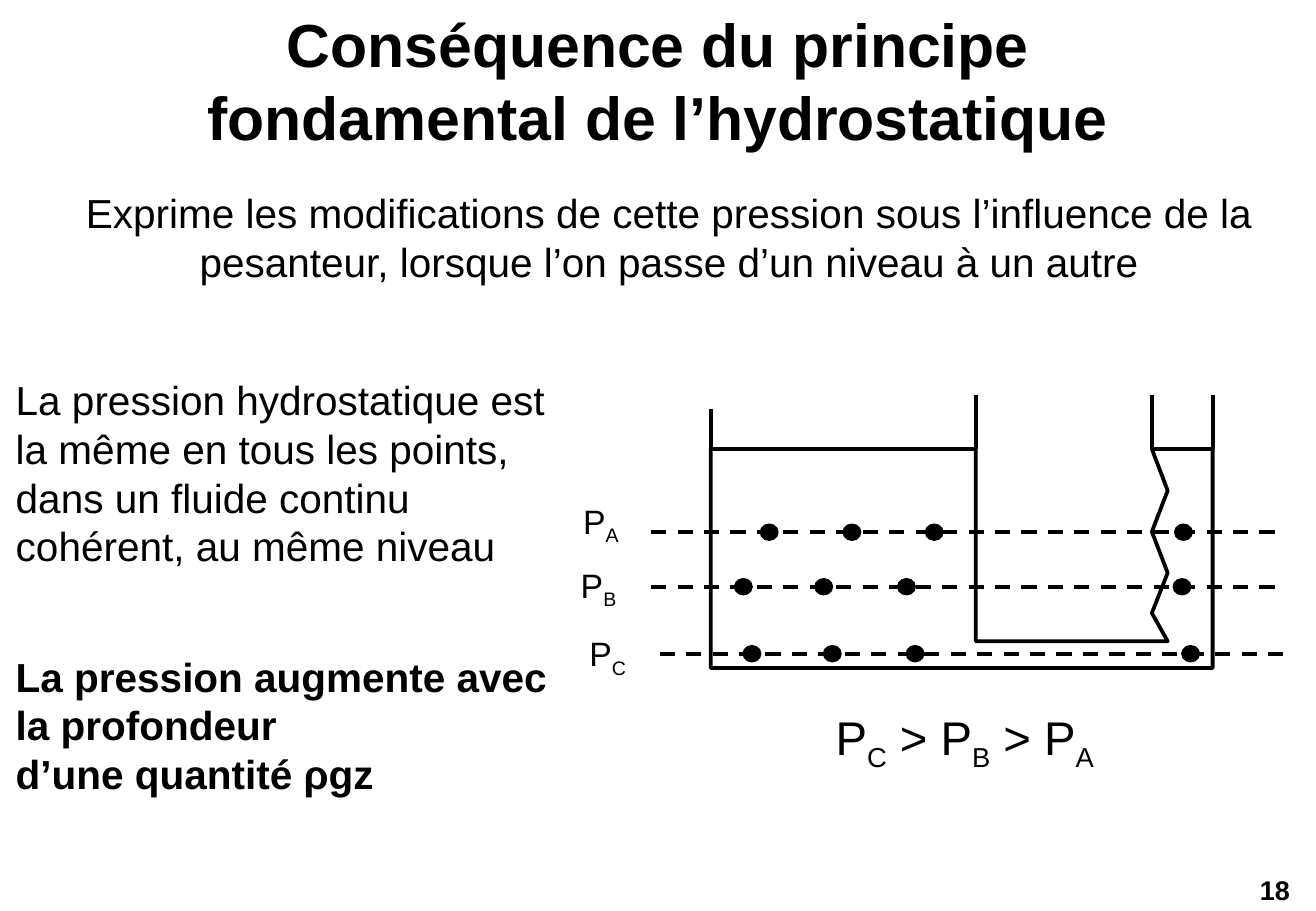
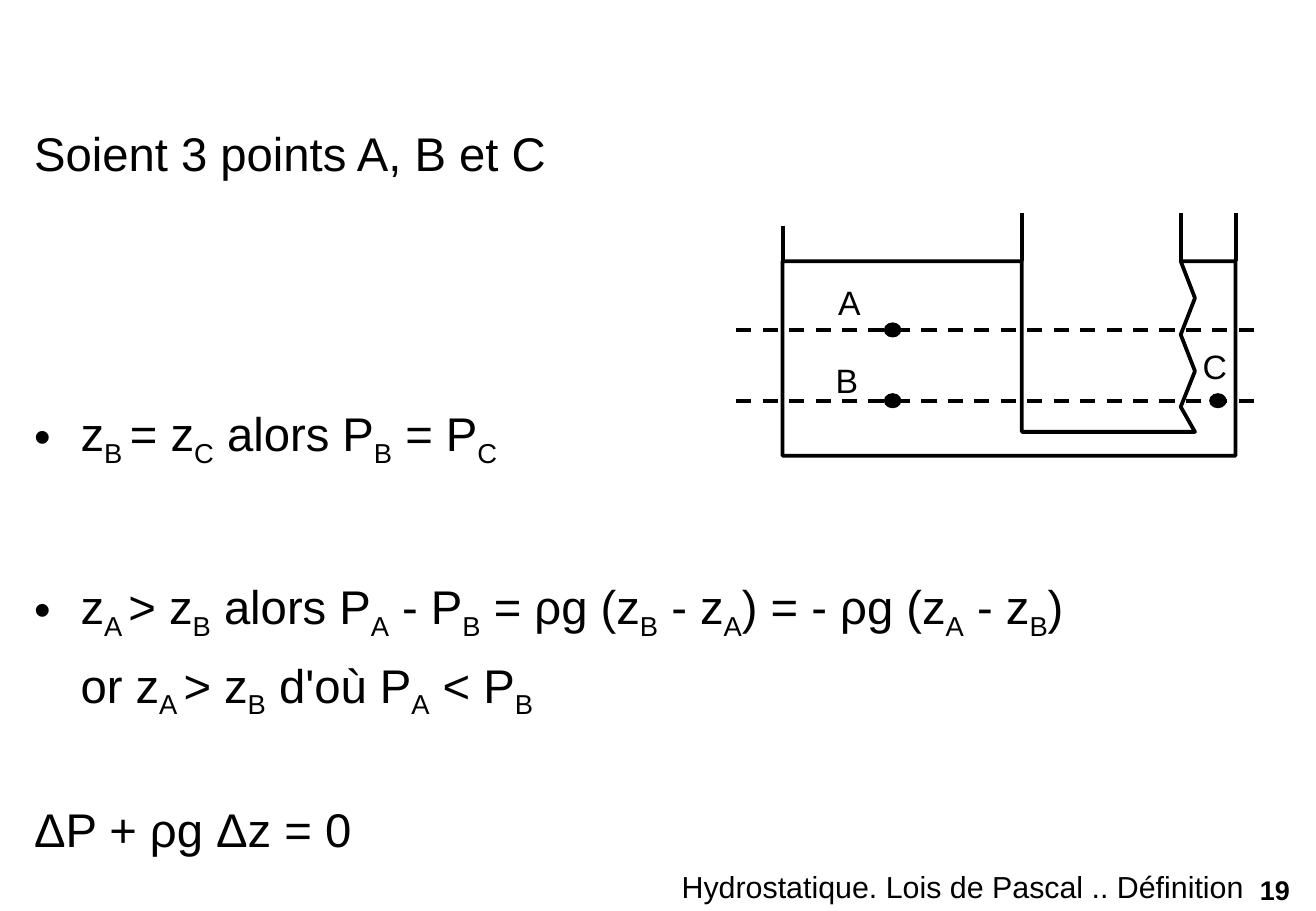
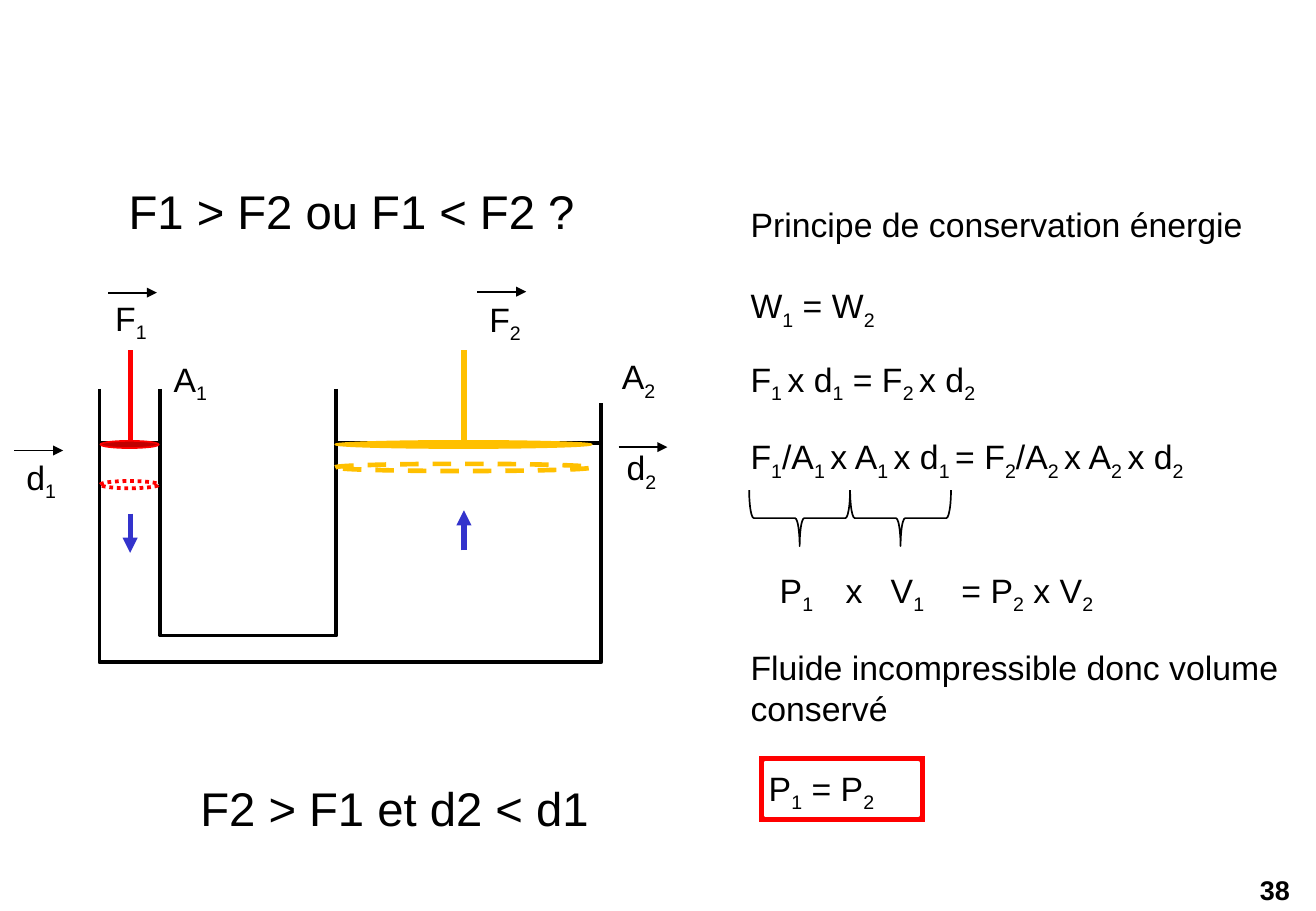
import pptx
import pptx.util
import pptx.dml.color
import pptx.enum.dml
import pptx.enum.shapes
import pptx.enum.text
import pptx.oxml.ns
import lxml.etree

Cm = pptx.util.Cm
Pt = pptx.util.Pt
RGB = pptx.dml.color.RGBColor
SHAPE = pptx.enum.shapes.MSO_SHAPE
DASH = pptx.enum.dml.MSO_LINE
ANCHOR = pptx.enum.text.MSO_ANCHOR
ALIGN = pptx.enum.text.PP_ALIGN
qn = pptx.oxml.ns.qn

BLACK = RGB(0x00, 0x00, 0x00)
WHITE = RGB(0xFF, 0xFF, 0xFF)
RED = RGB(0xFF, 0x00, 0x00)
DARK_RED = RGB(0xC0, 0x00, 0x00)
GOLD = RGB(0xFF, 0xC0, 0x00)
BLUE = RGB(0x33, 0x33, 0xCC)


class Lesson:
    font = "Arial"
    wall = 2.25
    content_layout = 1
    blank_layout = 6

    def __init__(self):
        self.deck = pptx.Presentation()
        self.deck.slide_width = Cm(27.51)
        self.deck.slide_height = Cm(19.05)
        self.page = None

    def new_page(self, number, layout):
        self.page = self.deck.slides.add_slide(self.deck.slide_layouts[layout])
        self.text(str(number), 26.09, 18.14, 1.3, 0.94, 16, bold=True)

    def set_para(self, para, text, size, bold=False):
        if "[" in text:
            for position, part in enumerate(text.replace("]", "[").split("[")):
                if part:
                    span = para.add_run()
                    span.text = part
                    if position % 2:
                        span._r.get_or_add_rPr().set("baseline", "-25000")
        else:
            para.text = text
        for span in para.runs:
            span.font.name = self.font
            span.font.size = Pt(size)
            span.font.bold = bold
            span.font.color.rgb = BLACK

    def text(self, text, left, top, width, height, size=20, bold=False,
             anchor=ANCHOR.TOP, tabs=()):
        box = self.page.shapes.add_textbox(Cm(left), Cm(top), Cm(width), Cm(height))
        box.text_frame.word_wrap = True
        box.text_frame.vertical_anchor = anchor
        para = box.text_frame.paragraphs[0]
        if tabs:
            stops = lxml.etree.SubElement(para._p.get_or_add_pPr(), qn("a:tabLst"))
            for stop in tabs:
                lxml.etree.SubElement(stops, qn("a:tab"), pos=str(Cm(stop)), algn="l")
        self.set_para(para, text, size, bold)
        return box

    def place(self, holder, left, top, width, height, anchor):
        holder.left, holder.top = Cm(left), Cm(top)
        holder.width, holder.height = Cm(width), Cm(height)
        frame = holder.text_frame
        frame.word_wrap = True
        frame.auto_size = pptx.enum.text.MSO_AUTO_SIZE.NONE
        frame.vertical_anchor = anchor
        return frame

    def title(self, text):
        holder = self.page.shapes.title
        if not text:
            holder.element.getparent().remove(holder.element)
            return
        frame = self.place(holder, 2.06, 0.08, 23.39, 3.18, ANCHOR.MIDDLE)
        para = frame.paragraphs[0]
        para.alignment = ALIGN.CENTER
        self.set_para(para, text, 36, bold=True)

    def body(self, items, left, top, width, height, size, align=ALIGN.LEFT):
        holder = self.page.placeholders[1]
        frame = self.place(holder, left, top, width, height, ANCHOR.TOP)
        for index, (text, before, bullet, indent) in enumerate(items):
            para = frame.add_paragraph() if index else frame.paragraphs[0]
            props = para._p.get_or_add_pPr()
            props.set("marL", str(Cm(indent)))
            props.set("indent", str(-Cm(indent) if bullet else 0))
            if bullet:
                lxml.etree.SubElement(props, qn("a:buChar"), char="•")
            else:
                lxml.etree.SubElement(props, qn("a:buNone"))
            para.space_before = Pt(before)
            para.alignment = align
            self.set_para(para, text, size)

    def line(self, start, end, color=BLACK, width=wall, dash=None, arrow=False):
        points = [Cm(value) for value in (*start, *end)]
        link = self.page.shapes.add_connector(
            pptx.enum.shapes.MSO_CONNECTOR.STRAIGHT, *points)
        link.line.color.rgb = color
        link.line.width = Pt(width)
        if dash:
            link.line.dash_style = dash
        props = link.element.spPr
        if arrow:
            lxml.etree.SubElement(props.find(qn("a:ln")), qn("a:tailEnd"), type="triangle")
        lxml.etree.SubElement(props, qn("a:effectLst"))

    def outline(self, shape, fill, color, width, dash=None):
        shape.shadow.inherit = False
        if fill is None:
            shape.fill.background()
        else:
            shape.fill.solid()
            shape.fill.fore_color.rgb = fill
        shape.line.color.rgb = color
        shape.line.width = Pt(width)
        if dash:
            shape.line.dash_style = dash

    def shape(self, kind, left, top, width, height, fill, color, weight=1, dash=None):
        shape = self.page.shapes.add_shape(kind, Cm(left), Cm(top), Cm(width), Cm(height))
        self.outline(shape, fill, color, weight, dash)
        return shape

    def level(self, left, right, y, dots, dot_width, dot_height):
        self.line((left, y), (right, y), dash=DASH.DASH)
        for x in dots:
            self.shape(SHAPE.OVAL, x - dot_width / 2, y - dot_height / 2,
                       dot_width, dot_height, BLACK, BLACK)

    def vessel(self, left, top, width, height, wavy=True):
        def point(x, y):
            return left + x * width / 10.49, top + y * height / 5.72

        wave = [(9.55, 2.01), (9.22, 2.87), (9.55, 3.73), (9.22, 4.57), (9.55, 5.16)]
        tube = wave if wavy else [(9.22, 5.16)]
        corners = [(0, 1.14), (0, 5.72), (10.49, 5.72), (10.49, 1.14), (9.22, 1.14),
                   *tube, (5.54, 5.16), (5.54, 1.14)]
        points = [tuple(Cm(value) for value in point(*corner)) for corner in corners]
        builder = self.page.shapes.build_freeform(*points[0])
        builder.add_line_segments(points[1:], close=True)
        self.outline(builder.convert_to_shape(), None, BLACK, self.wall)
        for x, y in ((0, 0.3), (5.54, 0), (9.22, 0), (10.49, 0)):
            self.line(point(x, y), point(x, 1.14))


def pressure_levels(lesson):
    lesson.new_page(18, lesson.content_layout)
    lesson.title("Conséquence du principe fondamental de l’hydrostatique")
    lesson.body([("Exprime les modifications de cette pression sous l’influence de la "
                  "pesanteur, lorsque l’on passe d’un niveau à un autre", 0, False, 0)],
                0.46, 3.81, 27.05, 2.3, 24, ALIGN.CENTER)
    lesson.text("La pression hydrostatique est la même en tous les points, dans un fluide "
                "continu cohérent, au même niveau", 0.08, 7.7, 11.68, 4.37, 24,
                anchor=ANCHOR.MIDDLE)
    lesson.text("La pression augmente avec la profondeur\vd’une quantité ρgz",
                0.08, 13.49, 11.61, 3.33, 24, bold=True, anchor=ANCHOR.MIDDLE)
    lesson.vessel(14.86, 8.25, 10.49, 5.72)
    levels = [
        ("P[A]", 11.94, 10.34, 13.61, 11.13, (16.08, 17.81, 19.53, 24.74)),
        ("P[B]", 11.89, 11.68, 13.61, 12.27, (15.54, 17.22, 18.95, 24.71)),
        ("P[C]", 12.07, 13.11, 13.79, 13.67, (15.72, 17.4, 19.13, 24.89)),
    ]
    for name, label_left, label_top, left, y, dots in levels:
        lesson.level(left, left + 13.26, y, dots, 0.36, 0.33)
        lesson.text(name, label_left, label_top, 1.7, 1.09)
    lesson.text("P[C] > P[B] > P[A]", 17.22, 14.68, 7, 1.45, 28)


def three_points(lesson):
    lesson.new_page(19, lesson.content_layout)
    lesson.title("")
    lesson.body([
        ("Soient 3 points A, B et C", 0, False, 0),
        ("z[B ]= z[C] alors P[B] = P[C]", 132.6, True, 0.97),
        ("z[A ]> z[B] alors P[A] - P[B] = ρg (z[B] - z[A]) = - ρg (z[A] - z[B])",
         64.3, True, 0.97),
        ("or z[A ]> z[B] d'où P[A] < P[B]", 8.2, False, 0.97),
        ("ΔP + ρg Δz = 0", 47.3, False, 0),
    ], 0.46, 2.47, 26.59, 15.3, 28)
    lesson.text("Hydrostatique. Lois de Pascal .. Définition", 14, 18.03, 12.7, 1.02, 18)
    lesson.vessel(16.36, 4.45, 9.47, 5.08)
    for y, dots in ((6.9, (18.66,)), (8.38, (18.66, 25.46))):
        lesson.level(15.39, 26.44, y, dots, 0.33, 0.28)
    for name, left, top in (("A", 17.27, 5.77), ("B", 17.22, 7.39), ("C", 24.89, 7.11)):
        lesson.text(name, left, top, 1.2, 1.09)


def pistons(lesson):
    lesson.new_page(38, lesson.blank_layout)
    lesson.vessel(12.57, 8.13, -10.49, 5.72, wavy=False)
    for name, left, top in (("A[1]", 3.38, 7.37), ("A[2]", 12.75, 7.32),
                            ("d[1]", 0.3, 9.42), ("d[2]", 12.85, 9.22),
                            ("F[1]", 2.16, 6.1), ("F[2]", 9.98, 6.12)):
        lesson.text(name, left, top, 1.7, 1.12)
    for x, left, width, color, fill, ghost_top, weight, dash in (
            (2.72, 2.1, 1.22, RED, DARK_RED, 10.06, 2.25, DASH.ROUND_DOT),
            (9.7, 7.01, 5.36, GOLD, GOLD, 9.7, 2.75, DASH.DASH)):
        lesson.line((x, 7.32), (x, 9.27), color, 3)
        lesson.shape(SHAPE.OVAL, left, 9.22, width, 0.15, fill, color)
        lesson.shape(SHAPE.OVAL, left, ghost_top, width, 0.15, WHITE, color, weight, dash)
    for left, y in ((2.26, 6.12), (9.98, 6.1), (0.3, 9.42), (12.93, 9.35)):
        lesson.line((left, y), (left + 1.02, y), width=1, arrow=True)
    lesson.line((9.7, 11.51), (9.7, 10.67), BLUE, 3, arrow=True)
    lesson.line((2.72, 10.74), (2.72, 11.56), BLUE, 3, arrow=True)

    principle = lesson.text("Principe de conservation énergie", 15.44, 4.14, 11.5, 3.4)
    work = principle.text_frame.add_paragraph()
    work.space_before = Pt(24)
    lesson.set_para(work, "W[1] = W[2]", 20)
    lesson.text("F[1 ]x d[1] = F[2 ]x d[2]", 15.44, 7.37, 10.9, 1.68)
    lesson.text("F[1]/A[1 ]x A[1 ]x d[1 ]= F[2]/A[2 ]x A[2 ]x d[2]", 15.44, 8.99, 10.9, 1.68)
    for left in (16.13, 18.24):
        brace = lesson.shape(SHAPE.RIGHT_BRACE, left, 9.78, 1.17, 2.11, None, BLACK)
        brace.rotation = 90
    lesson.text("P[1]\tx\tV[1]\t= P[2] x V[2]", 16.05, 11.79, 10.49, 1.68,
                tabs=(1.38, 2.32, 3.8))
    lesson.text("Fluide incompressible donc volume conservé", 15.44, 13.41, 11.56, 1.96)
    lesson.shape(SHAPE.FRAME, 15.82, 15.77, 3.56, 1.45, RED, WHITE, 2.25)
    lesson.text("P[1] = P[2]", 15.82, 15.93, 10.52, 1.12)
    lesson.text("F2 > F1 et d2 < d1", 3.94, 16.18, 9.5, 1.45, 28)
    lesson.text("F1 > F2 ou F1 < F2 ?", 2.44, 3.68, 11, 1.45, 28)


def main():
    lesson = Lesson()
    pressure_levels(lesson)
    three_points(lesson)
    pistons(lesson)
    lesson.deck.save("out.pptx")


if __name__ == "__main__":
    main()
